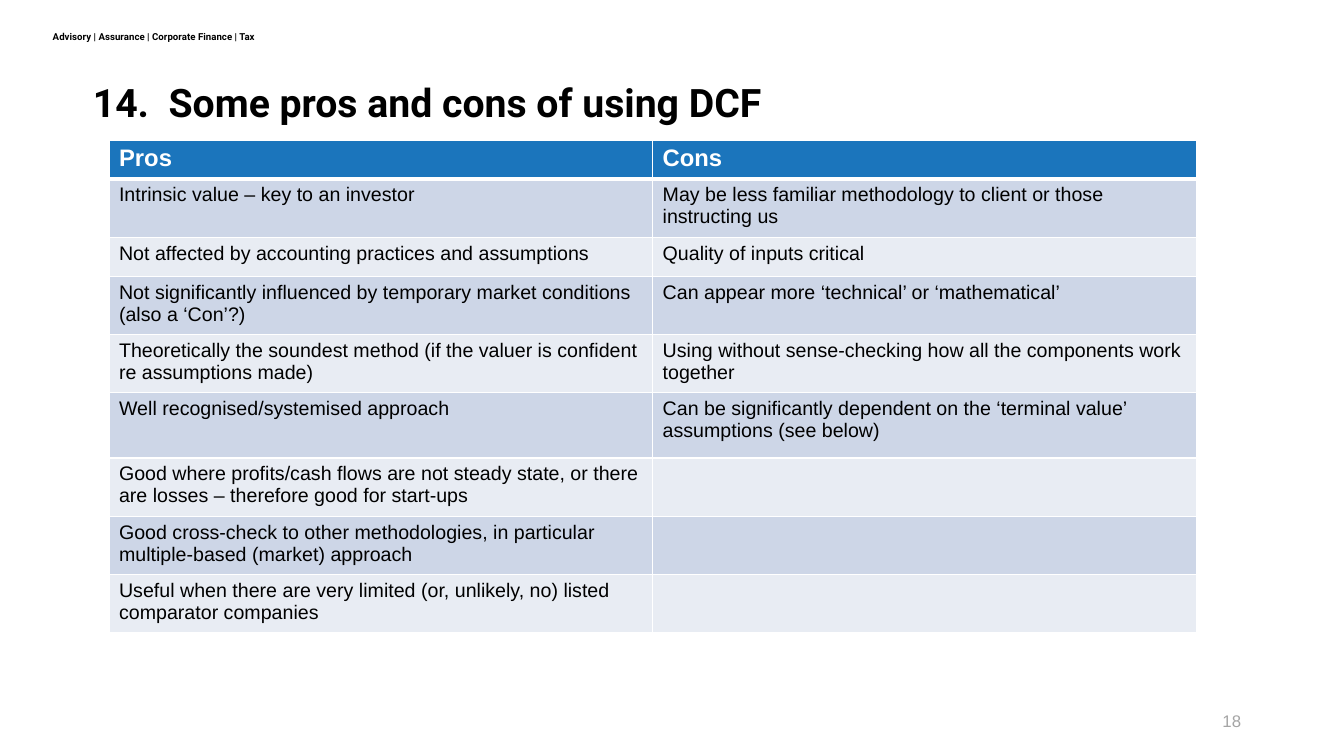
import pptx
import pptx.dml.color
import pptx.enum.text
import pptx.oxml
import pptx.oxml.ns
import pptx.util
from dataclasses import dataclass
from pptx.util import Cm

ANCHOR = pptx.enum.text.MSO_ANCHOR
ALIGN = pptx.enum.text.PP_ALIGN


@dataclass(frozen=True)
class Theme:
    heading_font: str = "Roboto"
    body_font: str = "Arial"
    ink: str = "000000"
    white: str = "FFFFFF"
    muted: str = "A5A5A5"
    header_fill: str = "1B75BC"
    bands: tuple = ("CDD6E7", "E8ECF3")
    title_size: int = 28
    header_size: int = 17
    cell_size: int = 14
    small_size: int = 12


THEME = Theme()

COLUMN_HEADS = ("Pros", "Cons")
ARGUMENTS = [
    ("Intrinsic value – key to an investor",
     "May be less familiar methodology to client or those instructing us"),
    ("Not affected by accounting practices and assumptions",
     "Quality of inputs critical"),
    ("Not significantly influenced by temporary market conditions (also a ‘Con’?)",
     "Can appear more ‘technical’ or ‘mathematical’"),
    ("Theoretically the soundest method (if the valuer is confident re assumptions made)",
     "Using without sense-checking how all the components work together"),
    ("Well recognised/systemised approach",
     "Can be significantly dependent on the ‘terminal value’ assumptions (see below)"),
    ("Good where profits/cash flows are not steady state, or there are losses – "
     "therefore good for start-ups", ""),
    ("Good cross-check to other methodologies, in particular multiple-based (market) approach", ""),
    ("Useful when there are very limited (or, unlikely, no) listed comparator companies", ""),
]
SINGLE_LINE, DOUBLE_LINE, TALL = 0.98, 1.47, 1.64
ROW_HEIGHTS = (SINGLE_LINE, DOUBLE_LINE, SINGLE_LINE, DOUBLE_LINE, DOUBLE_LINE,
               TALL, DOUBLE_LINE, DOUBLE_LINE, DOUBLE_LINE)


def rgb(colour):
    return pptx.dml.color.RGBColor.from_string(colour)


def write(frame, text, *, size, font=THEME.body_font, colour=THEME.ink, bold=False,
          align=ALIGN.LEFT, line_spacing=None, raised=None):
    """Fill the first paragraph; raised is a superscript offset in percent."""
    paragraph = frame.paragraphs[0]
    paragraph.alignment = align
    paragraph.line_spacing = line_spacing
    run = paragraph.add_run()
    run.text = text
    run.font.name = font
    run.font.size = pptx.util.Pt(size)
    run.font.bold = bold
    run.font.color.rgb = rgb(colour)
    if raised:
        run.font._element.set("baseline", str(raised * 1000))


def set_frame(frame, *, anchor, inset=None, wrap=True):
    frame.word_wrap = wrap
    frame.auto_size = pptx.enum.text.MSO_AUTO_SIZE.NONE
    frame.vertical_anchor = anchor
    if inset is not None:
        frame.margin_left = frame.margin_right = inset
        frame.margin_top = frame.margin_bottom = inset


def add_label(slide, text, left, top, width, height, *, inset=None, wrap=True, **format):
    frame = slide.shapes.add_textbox(left, top, width, height).text_frame
    set_frame(frame, anchor=ANCHOR.MIDDLE, inset=inset, wrap=wrap)
    write(frame, text, **format)


def set_title(slide, text):
    title = slide.shapes.title
    title.left, title.top, title.width, title.height = Cm(2.34), Cm(1.24), Cm(29.21), Cm(1.88)
    set_frame(title.text_frame, anchor=ANCHOR.BOTTOM, inset=0)
    write(title.text_frame, text, size=THEME.title_size, font=THEME.heading_font,
          bold=True, line_spacing=0.7)


def set_borders(cell, **widths):
    """Draw white borders, with widths in points by side: L, R, T, B."""
    properties = cell._tc.get_or_add_tcPr()
    for side in "LRTB":
        width = pptx.util.Pt(widths.get(side, 1))
        properties.append(pptx.oxml.parse_xml(
            f'<a:ln{side} {pptx.oxml.ns.nsdecls("a")} w="{width}"><a:solidFill>'
            f'<a:srgbClr val="{THEME.white}"/></a:solidFill></a:ln{side}>'))


def fill_cell(cell, text, fill, borders, **format):
    cell.margin_left = cell.margin_right = Cm(0.25)
    cell.margin_top = cell.margin_bottom = Cm(0.13)
    set_borders(cell, **borders)
    cell.fill.solid()
    cell.fill.fore_color.rgb = rgb(fill)
    if text:
        write(cell.text_frame, text, **format)


def add_comparison(slide):
    rows = [COLUMN_HEADS] + ARGUMENTS
    table = slide.shapes.add_table(len(rows), len(COLUMN_HEADS), Cm(2.75), Cm(3.53),
                                   Cm(27.4), Cm(sum(ROW_HEIGHTS))).table
    for column in table.columns:
        column.width = Cm(13.7)
    for index, (texts, height) in enumerate(zip(rows, ROW_HEIGHTS)):
        table.rows[index].height = Cm(height)
        if index == 0:
            fill, borders = THEME.header_fill, {"B": 3}
            format = dict(size=THEME.header_size, colour=THEME.white, bold=True)
        else:
            fill = THEME.bands[(index - 1) % len(THEME.bands)]
            borders = {"T": 3} if index == 1 else {}
            format = dict(size=THEME.cell_size)
        for position, text in enumerate(texts):
            fill_cell(table.cell(index, position), text, fill, borders, **format)


def main():
    deck = pptx.Presentation()
    deck.slide_width, deck.slide_height = Cm(33.87), Cm(19.05)
    title_only = deck.slide_layouts[5]
    slide = deck.slides.add_slide(title_only)
    add_label(slide, "Advisory | Assurance | Corporate Finance | Tax",
              Cm(1.33), Cm(0.74), Cm(6.5), Cm(0.5), inset=0, wrap=False,
              size=THEME.small_size, font=THEME.heading_font, bold=True, raised=30)
    set_title(slide, "14.  Some pros and cons of using DCF")
    add_comparison(slide)
    add_label(slide, "18", Cm(30.13), Cm(17.66), Cm(1.4), Cm(1.01),
              size=THEME.small_size, colour=THEME.muted, align=ALIGN.RIGHT)
    deck.save("out.pptx")


if __name__ == "__main__":
    main()
